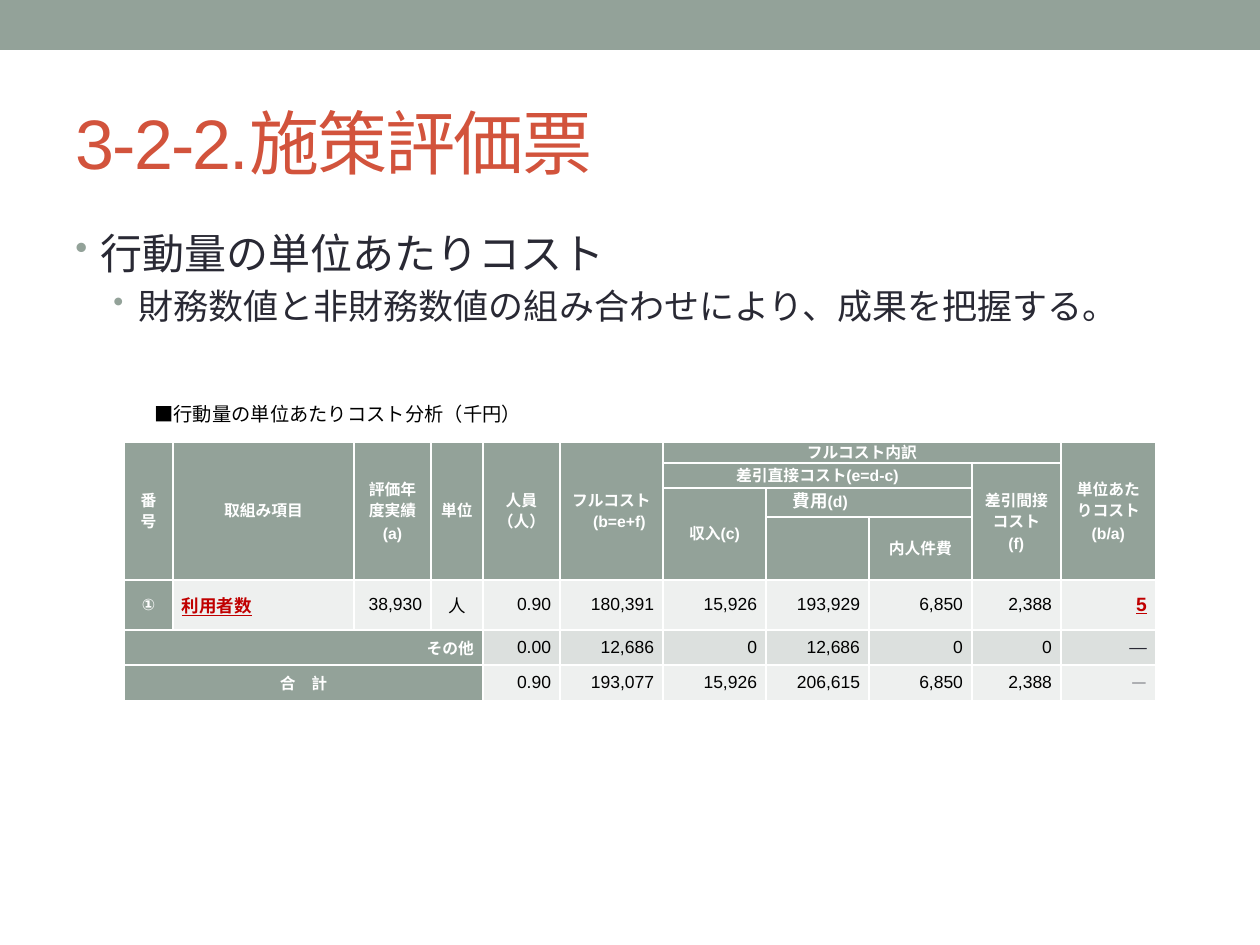
from dataclasses import dataclass

from lxml.etree import SubElement
from pptx import Presentation
from pptx.dml.color import RGBColor
from pptx.enum.shapes import MSO_SHAPE
from pptx.enum.text import MSO_ANCHOR, PP_ALIGN
from pptx.oxml.ns import qn
from pptx.util import Emu, Pt


@dataclass(frozen=True)
class Theme:
    sage: str = "93A299"
    light: str = "EEF0EF"
    shade: str = "DCE0DE"
    white: str = "FFFFFF"
    black: str = "000000"
    ink: str = "292934"
    title: str = "D2533C"
    accent: str = "C00000"
    latin: str = "Arial"
    japanese: str = "Noto Sans CJK JP"
    title_size: int = 40
    topic_size: int = 24
    detail_size: int = 20
    caption_size: int = 11
    result_size: int = 11
    value_size: int = 10
    header_size: int = 9


@dataclass(frozen=True)
class Header:
    row: int
    column: int
    lines: tuple[str, ...]
    rows: int = 1
    columns: int = 1
    align: PP_ALIGN = PP_ALIGN.CENTER


@dataclass(frozen=True)
class Bullet:
    text: str
    size: int
    left: int
    level: int


THEME = Theme()
PIXELS_PER_INCH = 126
COLUMN_WIDTHS = (49, 181, 77, 52, 77, 103, 103, 103, 103, 89, 95)
ROW_HEIGHTS = (12, 25, 29, 19, 50, 35, 36)
CELL_INSET = 9
BULLET_HANG = 25

BULLETS = (
    Bullet("行動量の単位あたりコスト", THEME.topic_size, 25, 0),
    Bullet("財務数値と非財務数値の組み合わせにより、成果を把握する。", THEME.detail_size, 63, 1),
)
HEADERS = (
    Header(0, 0, ("番号",), rows=4),
    Header(0, 1, ("取組み項目",), rows=4),
    Header(0, 2, ("評価年度実績(a)",), rows=4),
    Header(0, 3, ("単位",), rows=4),
    Header(0, 4, ("人員", "（人）"), rows=4),
    Header(0, 5, ("フルコスト", "　(b=e+f)"), rows=4),
    Header(0, 6, ("フルコスト内訳",), columns=4),
    Header(0, 10, ("単位あたりコスト", "(b/a)"), rows=4),
    Header(1, 6, ("差引直接コスト(e=d-c)",), columns=3),
    Header(1, 9, ("差引間接", "コスト", "(f)"), rows=3),
    Header(2, 6, ("収入(c)",), rows=2),
    Header(2, 7, (), columns=2),
    Header(3, 7, ()),
    Header(3, 8, ("内人件費",)),
)
ROW_LABELS = (
    Header(4, 0, ("①",)),
    Header(5, 0, ("その他",), columns=4, align=PP_ALIGN.RIGHT),
    Header(6, 0, ("合　計",), columns=4),
)
AMOUNTS = {
    4: ("0.90", "180,391", "15,926", "193,929", "6,850", "2,388"),
    5: ("0.00", "12,686", "0", "12,686", "0", "0"),
    6: ("0.90", "193,077", "15,926", "206,615", "6,850", "2,388"),
}


def px(length: int) -> Emu:
    return Emu(round(length * 914400 / PIXELS_PER_INCH))


def write(para, text: str, *, size: int, color: str, font: str = THEME.latin,
          bold: bool = False, underline: bool = False, align=None,
          line: int | None = None, left: int = 0, indent: int = 0,
          tracking: int = 0):
    if align is not None:
        para.alignment = align
    if line:
        para.line_spacing = Pt(line)
    if left or indent:
        properties = para._p.get_or_add_pPr()
        properties.set("marL", str(px(left)))
        properties.set("indent", str(px(indent)))
    span = para.add_run()
    span.text = text
    span.font.size = Pt(size)
    span.font.name = font
    span.font.bold = bold
    span.font.underline = underline
    span.font.color.rgb = RGBColor.from_string(color)
    run_properties = span._r.get_or_add_rPr()
    SubElement(run_properties, qn("a:ea")).set("typeface", THEME.japanese)
    if tracking:
        run_properties.set("spc", str(tracking * 100))


def next_para(frame, position: int):
    return frame.add_paragraph() if position else frame.paragraphs[0]


def add_box(page, left: int, top: int, width: int, height: int, anchor=MSO_ANCHOR.TOP):
    frame = page.shapes.add_textbox(px(left), px(top), px(width), px(height)).text_frame
    frame.word_wrap = True
    frame.vertical_anchor = anchor
    return frame


def add_bullet(para, bullet: Bullet) -> None:
    para.level = bullet.level
    para.space_before = Pt(bullet.size * 0.2)
    write(para, bullet.text, size=bullet.size, color=THEME.ink,
          left=bullet.left, indent=-BULLET_HANG)
    properties = para._p.get_or_add_pPr()
    bullet_color = SubElement(properties, qn("a:buClr"))
    SubElement(bullet_color, qn("a:srgbClr")).set("val", THEME.sage)
    SubElement(properties, qn("a:buSzPct")).set("val", "85000")
    SubElement(properties, qn("a:buChar")).set("char", "•")


def prepare_cell(cell, color: str):
    cell.fill.solid()
    cell.fill.fore_color.rgb = RGBColor.from_string(color)
    cell.vertical_anchor = MSO_ANCHOR.MIDDLE
    cell.margin_left = cell.margin_right = px(CELL_INSET)
    cell.margin_top = cell.margin_bottom = 0
    return cell.text_frame


def draw_header(table, header: Header, line: int | None = None) -> None:
    cell = table.cell(header.row, header.column)
    if header.rows > 1 or header.columns > 1:
        cell.merge(table.cell(header.row + header.rows - 1,
                              header.column + header.columns - 1))
    frame = prepare_cell(cell, THEME.sage)
    for position, text in enumerate(header.lines):
        para = next_para(frame, position)
        write(para, text, size=THEME.header_size, color=THEME.white, bold=True,
              align=header.align, line=line)


def draw_value(table, row: int, column: int, text: str, **changes) -> None:
    frame = prepare_cell(table.cell(row, column), THEME.shade if row == 5 else THEME.light)
    style = {"size": THEME.value_size, "color": THEME.black, "align": PP_ALIGN.RIGHT}
    write(frame.paragraphs[0], text, **(style | changes))


def draw_table(page) -> None:
    table = page.shapes.add_table(len(ROW_HEIGHTS), len(COLUMN_WIDTHS), px(124), px(442),
                                  px(sum(COLUMN_WIDTHS)), px(sum(ROW_HEIGHTS))).table
    for column, width in zip(table.columns, COLUMN_WIDTHS):
        column.width = px(width)
    for row, height in zip(table.rows, ROW_HEIGHTS):
        row.height = px(height)
    for header in HEADERS:
        draw_header(table, header, line=12)
    for label in ROW_LABELS:
        draw_header(table, label)

    expense = table.cell(2, 7).text_frame.paragraphs[0]
    for text, size in (("費用", THEME.value_size), ("(d)", THEME.header_size)):
        write(expense, text, size=size, color=THEME.white, bold=True, line=12, indent=18)

    for row, amounts in AMOUNTS.items():
        for column, amount in enumerate(amounts, start=4):
            draw_value(table, row, column, amount)
    emphasis = {"color": THEME.accent, "bold": True, "underline": True}
    draw_value(table, 4, 1, "利用者数", align=PP_ALIGN.LEFT, **emphasis)
    draw_value(table, 4, 2, "38,930")
    draw_value(table, 4, 3, "人", align=PP_ALIGN.CENTER, font=THEME.japanese)
    draw_value(table, 4, 10, "5", size=THEME.result_size, **emphasis)
    draw_value(table, 5, 10, "―", color=THEME.ink)
    draw_value(table, 6, 10, "　―", size=THEME.header_size, color=THEME.ink)


def main() -> None:
    deck = Presentation()
    deck.slide_width, deck.slide_height = px(1260), px(945)
    page = deck.slides.add_slide(deck.slide_layouts[6])

    band = page.shapes.add_shape(MSO_SHAPE.RECTANGLE, 0, 0, px(1260), px(50))
    band.shadow.inherit = False
    band.fill.solid()
    band.fill.fore_color.rgb = RGBColor.from_string(THEME.sage)
    band.line.fill.background()

    title = add_box(page, 63, 73, 1134, 136, MSO_ANCHOR.MIDDLE)
    write(title.paragraphs[0], "3-2-2.施策評価票", size=THEME.title_size,
          color=THEME.title, tracking=-1)
    body = add_box(page, 63, 221, 1134, 672)
    for position, bullet in enumerate(BULLETS):
        add_bullet(next_para(body, position), bullet)

    draw_table(page)
    caption = add_box(page, 124, 396, 934, 36, MSO_ANCHOR.MIDDLE)
    write(caption.paragraphs[0], "■行動量の単位あたりコスト分析（千円）",
          size=THEME.caption_size, color=THEME.black, font=THEME.japanese, indent=18)
    deck.save("out.pptx")


if __name__ == "__main__":
    main()
